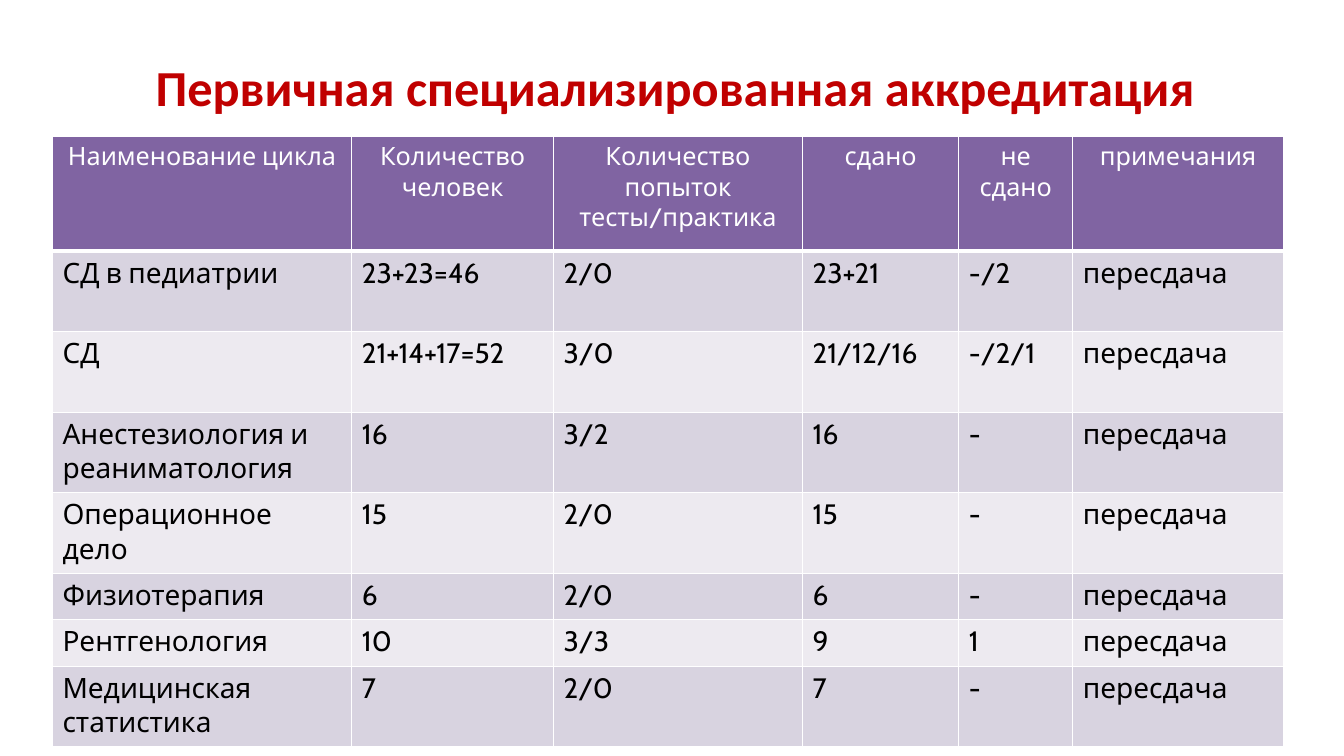
import dataclasses

import lxml.etree
import pptx
import pptx.dml.color
import pptx.enum.text
import pptx.oxml.ns
import pptx.util

EMU_PER_PX = 9144
RED = pptx.dml.color.RGBColor(0xC0, 0x00, 0x00)
WHITE = pptx.dml.color.RGBColor(0xFF, 0xFF, 0xFF)
BLACK = pptx.dml.color.RGBColor(0x00, 0x00, 0x00)
PURPLE = pptx.dml.color.RGBColor(0x80, 0x64, 0xA2)
DARK_BAND = pptx.dml.color.RGBColor(0xD8, 0xD3, 0xE0)
LIGHT_BAND = pptx.dml.color.RGBColor(0xED, 0xEA, 0xF0)
CENTER = pptx.enum.text.PP_ALIGN.CENTER
LEFT = pptx.enum.text.PP_ALIGN.LEFT


@dataclasses.dataclass(frozen=True)
class Column:
    heading: str
    width: int


@dataclasses.dataclass(frozen=True)
class Course:
    name: str
    people: str
    attempts: str
    passed: str
    failed: str
    height: int
    note: str = "пересдача"

    def texts(self) -> list[str]:
        return [self.name, self.people, self.attempts, self.passed, self.failed, self.note]


HEADER_HEIGHT = 114
COLUMNS = [
    Column("Наименование цикла", 297),
    Column("Количество человек", 200),
    Column("Количество попыток тесты/практика", 247),
    Column("сдано", 155),
    Column("не сдано", 113),
    Column("примечания", 209),
]
COURSES = [
    Course("СД в педиатрии", "23+23=46", "2/0", "23+21", "-/2", 80),
    Course("СД", "21+14+17=52", "3/0", "21/12/16", "-/2/1", 80),
    Course("Анестезиология и реаниматология", "16", "3/2", "16", "-", 80),
    Course("Операционное дело", "15", "2/0", "15", "-", 80),
    Course("Физиотерапия", "6", "2/0", "6", "-", 46),
    Course("Рентгенология", "10", "3/3", "9", "1", 46),
    Course("Медицинская статистика", "7", "2/0", "7", "-", 80),
]


def px(length: int) -> pptx.util.Emu:
    return pptx.util.Emu(length * EMU_PER_PX)


def write_text(text_frame, text: str, *, font: str, size: int,
               color: pptx.dml.color.RGBColor, bold: bool = False, align=LEFT) -> None:
    paragraph = text_frame.paragraphs[0]
    paragraph.alignment = align
    run = paragraph.add_run()
    run.text = text
    run.font.name = font
    run.font.size = pptx.util.Pt(size)
    run.font.bold = bold
    run.font.color.rgb = color


def set_borders(cell, widths: dict[str, int]) -> None:
    properties = cell._tc.get_or_add_tcPr()
    for position, (side, width) in enumerate(widths.items()):
        line = lxml.etree.Element(pptx.oxml.ns.qn(f"a:ln{side}"), w=str(pptx.util.Pt(width)))
        fill = lxml.etree.SubElement(line, pptx.oxml.ns.qn("a:solidFill"))
        lxml.etree.SubElement(fill, pptx.oxml.ns.qn("a:srgbClr"), val=str(WHITE))
        properties.insert(position, line)


def draw_title(slide) -> None:
    title = slide.shapes.title
    title.left, title.top, title.width, title.height = px(52), px(36), px(1236), px(99)
    title.text_frame.vertical_anchor = pptx.enum.text.MSO_ANCHOR.MIDDLE
    write_text(title.text_frame, "Первичная специализированная аккредитация",
               font="Calibri", size=36, color=RED, bold=True, align=CENTER)


def draw_table(slide) -> None:
    heights = [HEADER_HEIGHT] + [course.height for course in COURSES]
    rows = [[column.heading for column in COLUMNS]] + [course.texts() for course in COURSES]
    table = slide.shapes.add_table(
        len(rows), len(COLUMNS), px(52), px(135),
        px(sum(column.width for column in COLUMNS)), px(sum(heights))).table
    for table_column, column in zip(table.columns, COLUMNS):
        table_column.width = px(column.width)
    for row_index, (height, texts) in enumerate(zip(heights, rows)):
        table.rows[row_index].height = px(height)
        is_header = row_index == 0
        band = DARK_BAND if row_index % 2 else LIGHT_BAND
        for column_index, text in enumerate(texts):
            cell = table.cell(row_index, column_index)
            cell.fill.solid()
            cell.fill.fore_color.rgb = PURPLE if is_header else band
            set_borders(cell, {"L": 1, "R": 1, "T": 3 if row_index == 1 else 1,
                               "B": 3 if is_header else 1})
            write_text(cell.text_frame, text, font="Cabin",
                       size=18 if is_header else 20,
                       color=WHITE if is_header else BLACK,
                       align=CENTER if is_header else LEFT)


def main() -> None:
    presentation = pptx.Presentation()
    presentation.slide_width = px(1333)
    presentation.slide_height = px(750)
    slide = presentation.slides.add_slide(presentation.slide_layouts[5])
    draw_title(slide)
    draw_table(slide)
    presentation.save("out.pptx")


if __name__ == "__main__":
    main()
